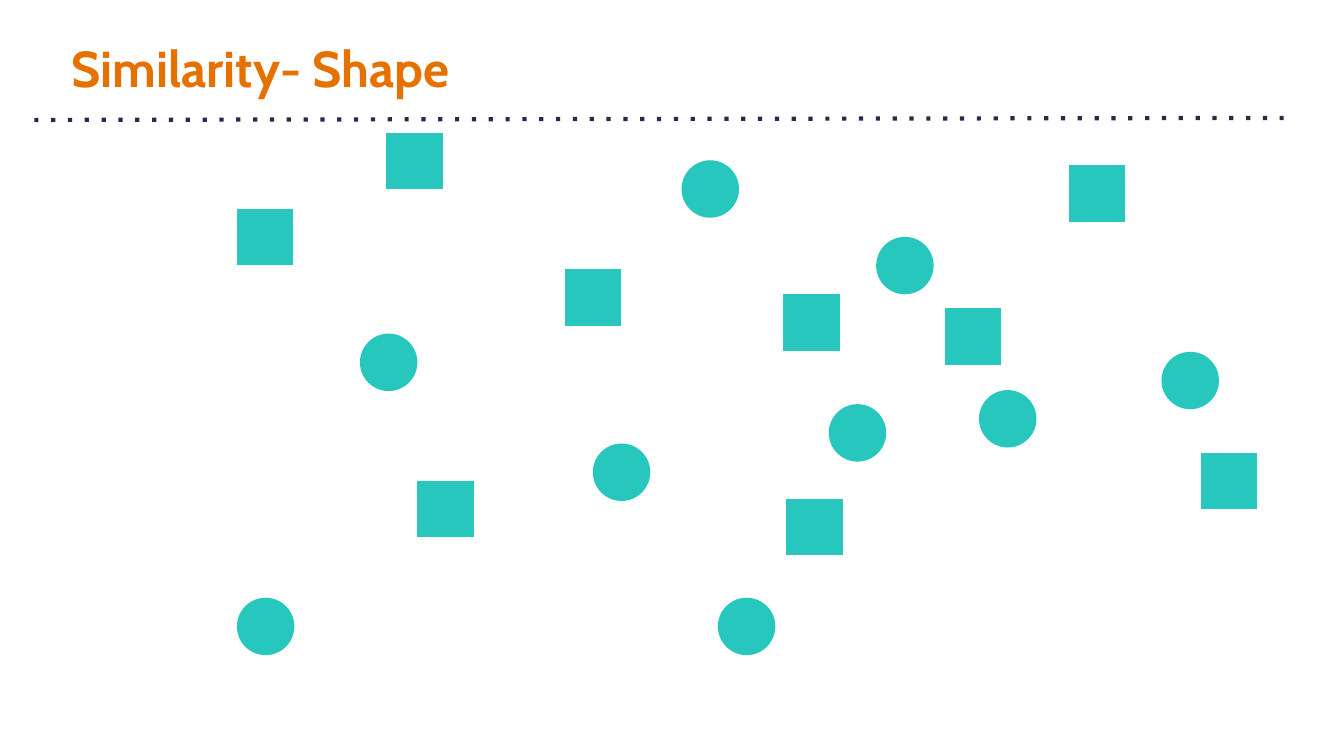
"""Builds the slide on similarity of shape: scattered squares and circles."""
from pptx import Presentation
from pptx.dml.color import RGBColor
from pptx.enum.dml import MSO_LINE
from pptx.enum.shapes import MSO_CONNECTOR, MSO_SHAPE
from pptx.enum.text import MSO_ANCHOR
from pptx.oxml.ns import qn
from pptx.util import Emu, Pt
from lxml.etree import SubElement

TITLE = "Similarity- Shape"
FONT = "Cabin"
ORANGE = RGBColor(0xE5, 0x72, 0x00)
NAVY = RGBColor(0x23, 0x2D, 0x4B)
TEAL = RGBColor(0x27, 0xC7, 0xBD)

SLIDE_SIZE = (1333, 750)
TITLE_BOX = (61, 24, 1212, 93)
TITLE_INSET = 10
RULE_ENDS = (34, 119, 1273, 117)
SQUARES = [(777, 292), (560, 267), (1060, 164), (780, 495), (414, 477),
           (235, 207), (383, 132), (937, 306), (1191, 449)]
CIRCLES = [(676, 159), (588, 440), (869, 235), (357, 331), (971, 387),
           (235, 593), (822, 401), (712, 593), (1152, 349)]
FIGURES = [(MSO_SHAPE.FLOWCHART_PROCESS, 56, SQUARES),
           (MSO_SHAPE.OVAL, 57, CIRCLES)]
EMU_PER_PX = 9144


def px(length):
    return Emu(length * EMU_PER_PX)


def add_rule(slide):
    rule = slide.shapes.add_connector(MSO_CONNECTOR.STRAIGHT, *map(px, RULE_ENDS))
    rule.line.color.rgb = NAVY
    rule.line.width = Pt(3)
    rule.line.dash_style = MSO_LINE.ROUND_DOT
    properties = rule.element.find(qn("p:spPr"))
    properties.find(qn("a:ln")).find(qn("a:prstDash")).set("val", "dot")
    SubElement(properties, qn("a:effectLst"))


def add_title(slide):
    frame = slide.shapes.add_textbox(*map(px, TITLE_BOX)).text_frame
    frame.word_wrap = True
    frame.vertical_anchor = MSO_ANCHOR.MIDDLE
    frame.margin_left = frame.margin_right = px(TITLE_INSET)
    frame.margin_top = frame.margin_bottom = px(TITLE_INSET)
    paragraph = frame.paragraphs[0]
    paragraph.line_spacing = 0.9
    run = paragraph.add_run()
    run.text = TITLE
    run.font.name = FONT
    run.font.size = Pt(36)
    run.font.bold = True
    run.font.color.rgb = ORANGE


def add_figures(slide):
    for kind, side, corners in FIGURES:
        for left, top in corners:
            shape = slide.shapes.add_shape(kind, *map(px, (left, top, side, side)))
            shape.shadow.inherit = False
            shape.fill.solid()
            shape.fill.fore_color.rgb = TEAL
            shape.line.fill.background()


def main():
    presentation = Presentation()
    presentation.slide_width, presentation.slide_height = map(px, SLIDE_SIZE)
    slide = presentation.slides.add_slide(presentation.slide_layouts[6])
    add_rule(slide)
    add_title(slide)
    add_figures(slide)
    presentation.save("out.pptx")


if __name__ == "__main__":
    main()
